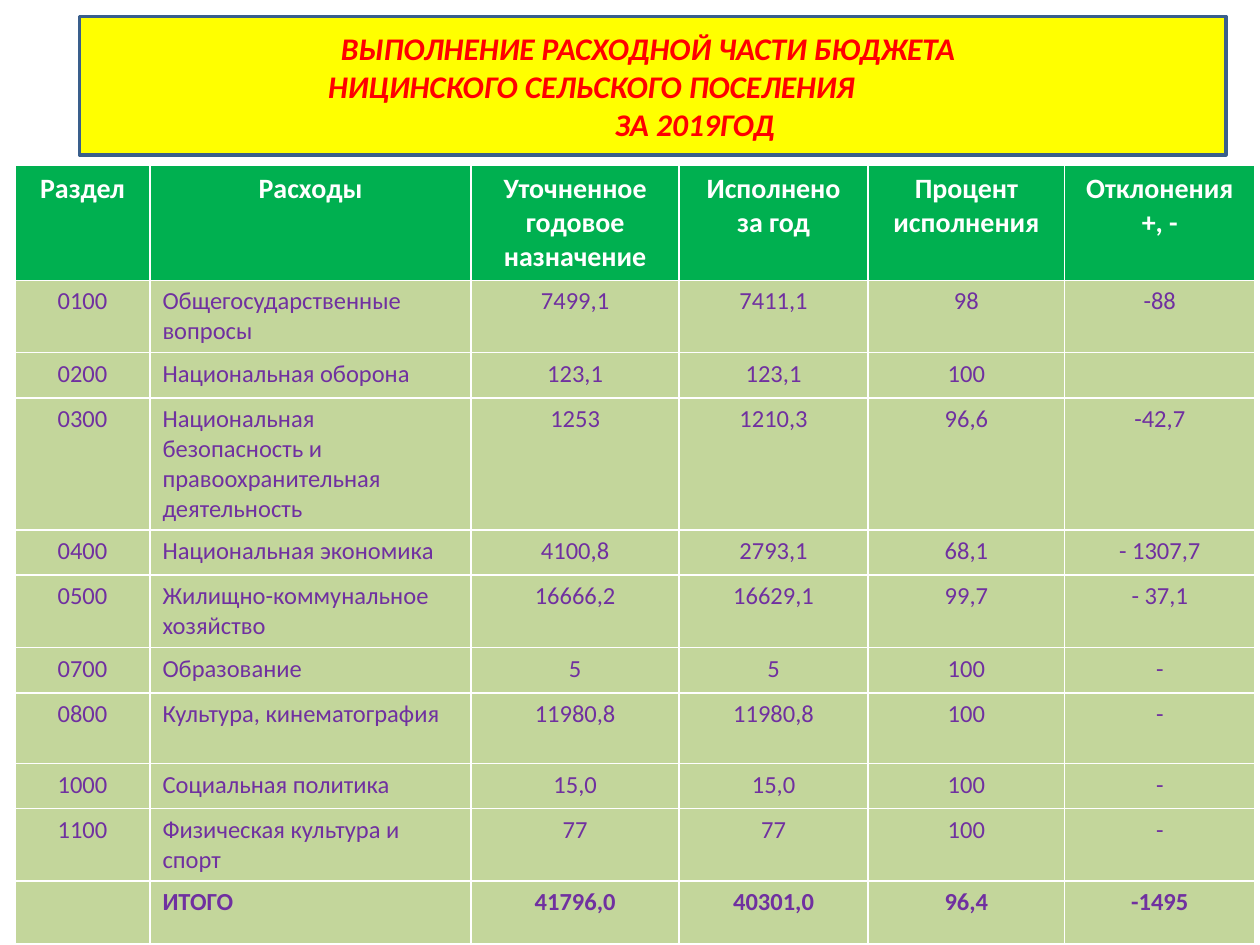
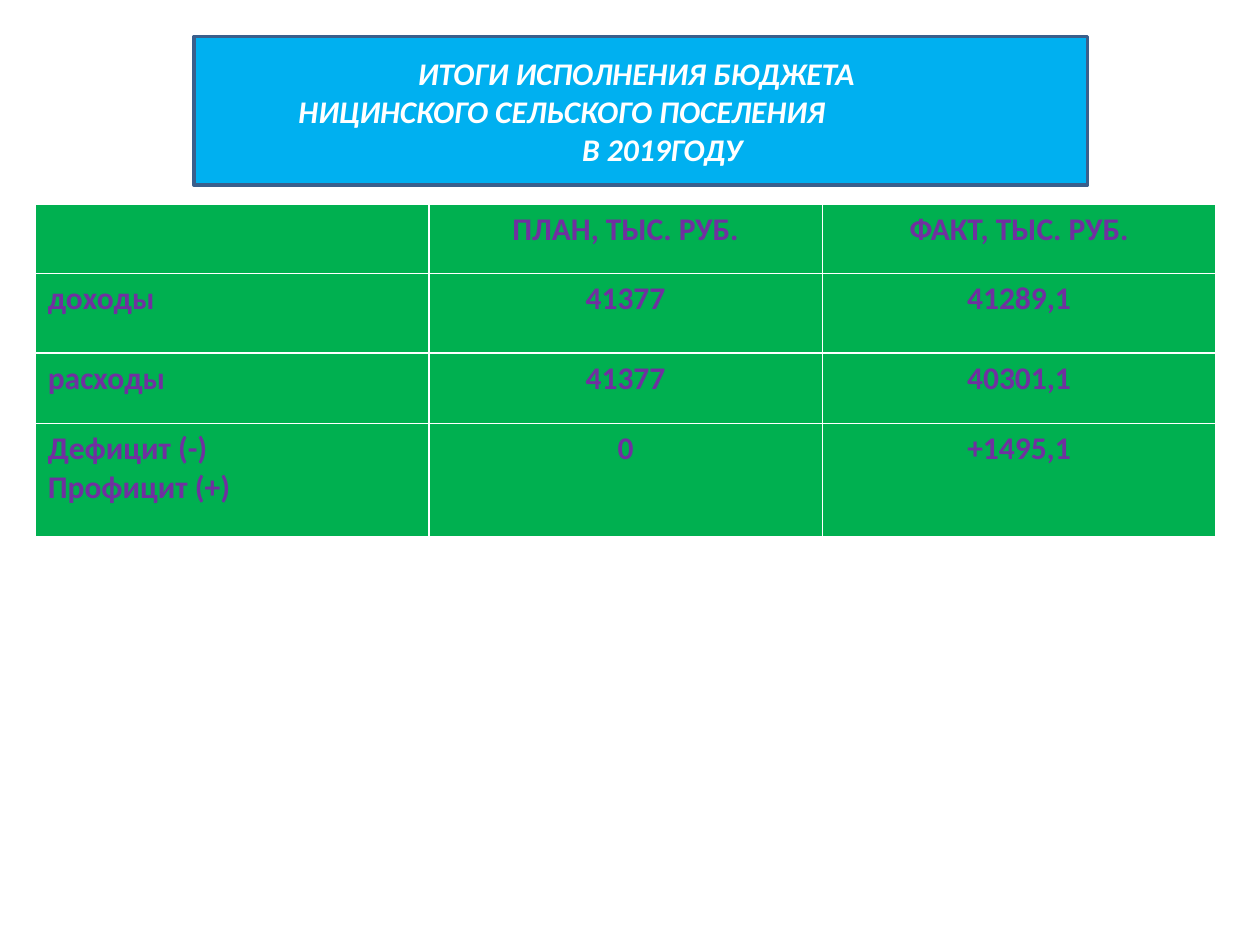
from pptx import Presentation
from pptx.dml.color import RGBColor
from pptx.enum.text import MSO_ANCHOR, MSO_AUTO_SIZE, PP_ALIGN
from pptx.util import Inches, Pt

FONT = "Calibri"
GREEN, LIGHT_GREEN, PURPLE = "00B050", "C3D69B", "7030A0"
WHITE, RED, YELLOW, SKY, BANNER_EDGE = "FFFFFF", "FF0000", "FFFF00", "00B0F0", "3A5F8C"


def rgb(hex_color):
    return RGBColor.from_string(hex_color)


def style(paragraph, size, color, bold, italic=False, align=PP_ALIGN.CENTER):
    paragraph.alignment = align
    font = paragraph.font
    font.name, font.size, font.bold, font.italic = FONT, Pt(size), bold, italic
    font.color.rgb = rgb(color)


# Content: banner lines carry their left indent, the right inset is shared
expenses = {
    "banner": (0.63, 0.13, 9.1, 1.1), "banner_fill": YELLOW, "banner_text": RED,
    "right_inset": 1.07,
    "lines": [("ВЫПОЛНЕНИЕ РАСХОДНОЙ ЧАСТИ БЮДЖЕТА", 0.9),
              ("НИЦИНСКОГО СЕЛЬСКОГО ПОСЕЛЕНИЯ", 0),
              ("ЗА 2019ГОД", 1.64)],
    "origin": (0.12, 1.31),
    "columns": [1.07, 2.55, 1.65, 1.5, 1.56, 1.51],
    "heights": [0.88, 0.56, 0.36, 1.02, 0.36, 0.56, 0.36, 0.56, 0.36, 0.56, 0.5],
    "label_column": 1, "body_fill": LIGHT_GREEN, "header_text": WHITE,
    "header_size": 16, "body_size": 14, "bold_rows": [0, 10],
    "rows": [
        ["Раздел", "Расходы", "Уточненное годовое назначение", "Исполнено за год",
         "Процент исполнения", "Отклонения +, -"],
        ["0100", "Общегосударственные вопросы", "7499,1", "7411,1", "98", "-88"],
        ["0200", "Национальная оборона", "123,1", "123,1", "100", ""],
        ["0300", "Национальная безопасность и правоохранительная деятельность",
         "1253", "1210,3", "96,6", "-42,7"],
        ["0400", "Национальная экономика", "4100,8", "2793,1", "68,1", "- 1307,7"],
        ["0500", "Жилищно-коммунальное хозяйство", "16666,2", "16629,1", "99,7", "- 37,1"],
        ["0700", "Образование", "5", "5", "100", "-"],
        ["0800", "Культура, кинематография", "11980,8", "11980,8", "100", "-"],
        ["1000", "Социальная политика", "15,0", "15,0", "100", "-"],
        ["1100", "Физическая культура и спорт", "77", "77", "100", "-"],
        ["", "ИТОГО", "41796,0", "40301,0", "96,4", "-1495"],
    ],
}
results = {
    "banner": (1.54, 0.29, 7.09, 1.18), "banner_fill": SKY, "banner_text": WHITE,
    "right_inset": 1.35,
    "lines": [("ИТОГИ ИСПОЛНЕНИЯ БЮДЖЕТА", 1.18),
              ("НИЦИНСКОГО СЕЛЬСКОГО ПОСЕЛЕНИЯ", 0),
              ("В 2019ГОДУ", 1.59)],
    "origin": (0.28, 1.62),
    "columns": [9.37 / 3] * 3,
    "heights": [0.55, 0.63, 0.56, 0.9],
    "label_column": 0, "body_fill": GREEN, "header_text": PURPLE,
    "header_size": 18, "body_size": 18, "bold_rows": range(4),
    "rows": [
        ["", "ПЛАН, ТЫС. РУБ.", "ФАКТ, ТЫС. РУБ."],
        ["доходы", "41377", "41289,1"],
        ["расходы", "41377", "40301,1"],
        ["Дефицит (-)\vПрофицит (+)", "0", "+1495,1"],
    ],
}

prs = Presentation()
prs.slide_width, prs.slide_height = Inches(10), Inches(7.5)
title_only = prs.slide_layouts[5]

for page in (expenses, results):
    slide = prs.slides.add_slide(title_only)

    # Title banner
    banner = slide.shapes.title
    banner.left, banner.top, banner.width, banner.height = map(Inches, page["banner"])
    banner.fill.solid()
    banner.fill.fore_color.rgb = rgb(page["banner_fill"])
    banner.line.color.rgb = rgb(BANNER_EDGE)
    banner.line.width = Pt(2)
    frame = banner.text_frame
    frame.auto_size = MSO_AUTO_SIZE.NONE
    frame.vertical_anchor = MSO_ANCHOR.MIDDLE
    frame.margin_right = Inches(page["right_inset"])
    frame.text = "\n".join(line for line, _ in page["lines"])
    for paragraph, (_, indent) in zip(frame.paragraphs, page["lines"]):
        style(paragraph, 18, page["banner_text"], bold=True, italic=True)
        paragraph._p.get_or_add_pPr().set("marL", str(Inches(indent)))

    # Budget table: the default table style supplies the white rules
    columns, heights = page["columns"], page["heights"]
    left, top = page["origin"]
    budget = slide.shapes.add_table(
        len(heights), len(columns), Inches(left), Inches(top),
        Inches(sum(columns)), Inches(sum(heights))).table
    for column, width in zip(budget.columns, columns):
        column.width = Inches(width)
    for row, height in zip(budget.rows, heights):
        row.height = Inches(height)

    for r, values in enumerate(page["rows"]):
        header = r == 0
        size = page["header_size"] if header else page["body_size"]
        color = page["header_text"] if header else PURPLE
        for c, value in enumerate(values):
            cell = budget.cell(r, c)
            cell.fill.solid()
            cell.fill.fore_color.rgb = rgb(GREEN if header else page["body_fill"])
            cell.text = value
            is_label = c == page["label_column"] and not header
            paragraph = cell.text_frame.paragraphs[0]
            style(paragraph, size, color, bold=r in page["bold_rows"],
                  align=PP_ALIGN.LEFT if is_label else PP_ALIGN.CENTER)
            if not value:  # keeps an empty cell from stretching its row
                paragraph._p.get_or_add_endParaRPr().set("sz", str(size * 100))

prs.save("out.pptx")
